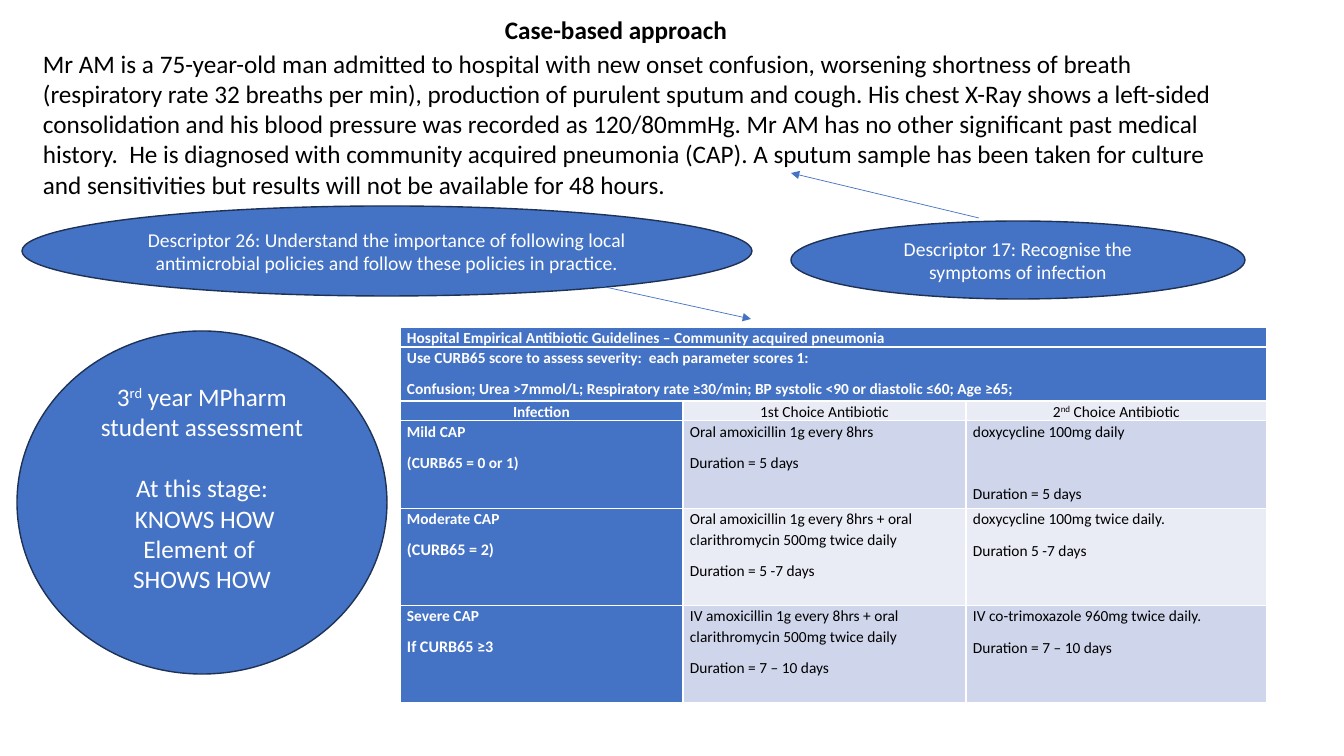
from lxml import etree
from pptx import Presentation
from pptx.dml.color import RGBColor
from pptx.enum.shapes import MSO_CONNECTOR, MSO_SHAPE
from pptx.enum.text import MSO_ANCHOR, PP_ALIGN
from pptx.oxml.ns import qn
from pptx.util import Emu, Pt

PX = 12192000 / 1344
BLUE, OUTLINE, WHITE, BLACK = "4472C4", "1E3256", "FFFFFF", "000000"
BAND_LIGHT, BAND_DARK = "E9EBF5", "CFD5EA"

# Text between ^ marks is superscript
TITLE = "Case-based approach"
CASE = (
    "Mr AM is a 75-year-old man admitted to hospital with new onset confusion, "
    "worsening shortness of breath (respiratory rate 32 breaths per min), production of "
    "purulent sputum and cough. His chest X-Ray shows a left-sided consolidation and his "
    "blood pressure was recorded as 120/80mmHg. Mr AM has no other significant past medical "
    "history.  He is diagnosed with community acquired pneumonia (CAP). A sputum sample has "
    "been taken for culture and sensitivities but results will not be available for 48 hours."
)
ASSESSMENT = ["3^rd^ year MPharm student assessment", "At this stage:", " KNOWS HOW",
              "Element of ", "SHOWS HOW"]
DESCRIPTORS = [  # box, text, arrow from, arrow to
    ((791, 221, 454, 78), "Descriptor 17: Recognise the symptoms of infection",
     (979, 218), (791, 173)),
    ((22, 206, 730, 90), "Descriptor 26: Understand the importance of following local "
     "antimicrobial policies and follow these policies in practice.",
     (587, 283), (751, 319)),
]
GUIDELINES = [  # row height, cells as lists of paragraphs
    (20, [["Hospital Empirical Antibiotic Guidelines – Community acquired pneumonia"]]),
    (54, [["Use CURB65 score to assess severity:  each parameter scores 1:",
           "Confusion; Urea >7mmol/L; Respiratory rate ≥30/min; "
           "BP systolic <90 or diastolic ≤60; Age ≥65;"]]),
    (20, [["Infection"], ["1st Choice Antibiotic"], ["2^nd^ Choice Antibiotic"]]),
    (88, [["Mild CAP", "(CURB65 = 0 or 1)"],
          ["Oral amoxicillin 1g every 8hrs", "Duration = 5 days"],
          ["doxycycline 100mg daily", "Duration = 5 days"]]),
    (97, [["Moderate CAP", "(CURB65 = 2)"],
          ["Oral amoxicillin 1g every 8hrs + oral clarithromycin 500mg twice daily",
           "Duration = 5 -7 days"],
          ["doxycycline 100mg twice daily.", "Duration 5 -7 days"]]),
    (97, [["Severe CAP", "If CURB65 ≥3"],
          ["IV amoxicillin 1g every 8hrs + oral clarithromycin 500mg twice daily",
           "Duration = 7 – 10 days"],
          ["IV co-trimoxazole 960mg twice daily.", "Duration = 7 – 10 days"]]),
]
COLUMNS = (283, 283, 301)
HEADER_ROW = 2
WIDE_GAP_CELL = (3, 2)


def px(*values):
    return [Emu(round(v * PX)) for v in values]


def rgb(color):
    return RGBColor.from_string(color)


def write(tf, lines, size=18, color=BLACK, bold=False, align=PP_ALIGN.LEFT,
          spacing=None, after=0):
    tf.word_wrap = True
    for i, line in enumerate(lines):
        p = tf.paragraphs[0] if i == 0 else tf.add_paragraph()
        p.alignment, p.line_spacing, p.space_after = align, spacing, Pt(after)
        for j, part in enumerate(line.split("^")):
            r = p.add_run()
            r.text = part
            r.font.name, r.font.size, r.font.bold = "Calibri", Pt(size), bold
            r.font.color.rgb = rgb(color)
            if j % 2:
                r.font._element.set("baseline", "30000")


def add_text(slide, box, lines, **fmt):
    write(slide.shapes.add_textbox(*px(*box)).text_frame, lines, **fmt)


def add_ellipse(slide, box, lines, size):
    sp = slide.shapes.add_shape(MSO_SHAPE.OVAL, *px(*box))
    sp.shadow.inherit = False
    sp.fill.solid()
    sp.fill.fore_color.rgb = rgb(BLUE)
    sp.line.color.rgb = rgb(OUTLINE)
    sp.line.width = Pt(1)
    tf = sp.text_frame
    tf.vertical_anchor = MSO_ANCHOR.MIDDLE
    write(tf, lines, size=size, color=WHITE, align=PP_ALIGN.CENTER)
    return tf


def add_arrow(slide, start, end):
    line = slide.shapes.add_connector(MSO_CONNECTOR.STRAIGHT, *px(*start, *end))
    line.line.color.rgb = rgb(BLUE)
    line.line.width = Pt(0.5)
    etree.SubElement(line.line._get_or_add_ln(), qn("a:tailEnd"), type="triangle")
    etree.SubElement(line._element.spPr, qn("a:effectLst"))


def add_guidelines(slide, left, top):
    heights = [height for height, _ in GUIDELINES]
    table = slide.shapes.add_table(len(heights), len(COLUMNS),
                                   *px(left, top, sum(COLUMNS), sum(heights))).table
    for column, width in zip(table.columns, px(*COLUMNS)):
        column.width = width
    for row, (height, cells) in enumerate(GUIDELINES):
        table.rows[row].height = px(height)[0]
        if len(cells) == 1:
            table.cell(row, 0).merge(table.cell(row, len(COLUMNS) - 1))
        for col, lines in enumerate(cells):
            cell = table.cell(row, col)
            cell.margin_left, cell.margin_right = px(7, 7)
            cell.margin_top = cell.margin_bottom = 0
            label = col == 0
            band = BAND_DARK if row % 2 else BAND_LIGHT
            cell.fill.solid()
            cell.fill.fore_color.rgb = rgb(BLUE if label else band)
            write(cell.text_frame, lines, size=11, color=WHITE if label else BLACK,
                  bold=label, spacing=1.07,
                  align=PP_ALIGN.CENTER if row == HEADER_ROW else PP_ALIGN.LEFT,
                  after=30 if (row, col) == WIDE_GAP_CELL else 8)
            if label and row > WIDE_GAP_CELL[0]:
                score = cell.text_frame.paragraphs[1]
                score.line_spacing, score.space_after = None, Pt(15)
                score.runs[0].font.size = Pt(11.5)


def main():
    prs = Presentation()
    prs.slide_width, prs.slide_height = px(1344, 756)
    slide = prs.slides.add_slide(prs.slide_layouts[6])

    add_text(slide, (33, 43, 1212, 160), [CASE])
    add_guidelines(slide, 400, 327)
    stage = add_ellipse(slide, (17, 331, 370, 343), ASSESSMENT, 18)
    stage.margin_bottom = px(35)[0]
    stage.paragraphs[1].space_before = Pt(22)
    add_text(slide, (386, 9, 460, 40), [TITLE], bold=True, align=PP_ALIGN.CENTER)
    for box, text, start, end in DESCRIPTORS:
        add_ellipse(slide, box, [text], 14)
        add_arrow(slide, start, end)

    prs.save("out.pptx")


if __name__ == "__main__":
    main()
